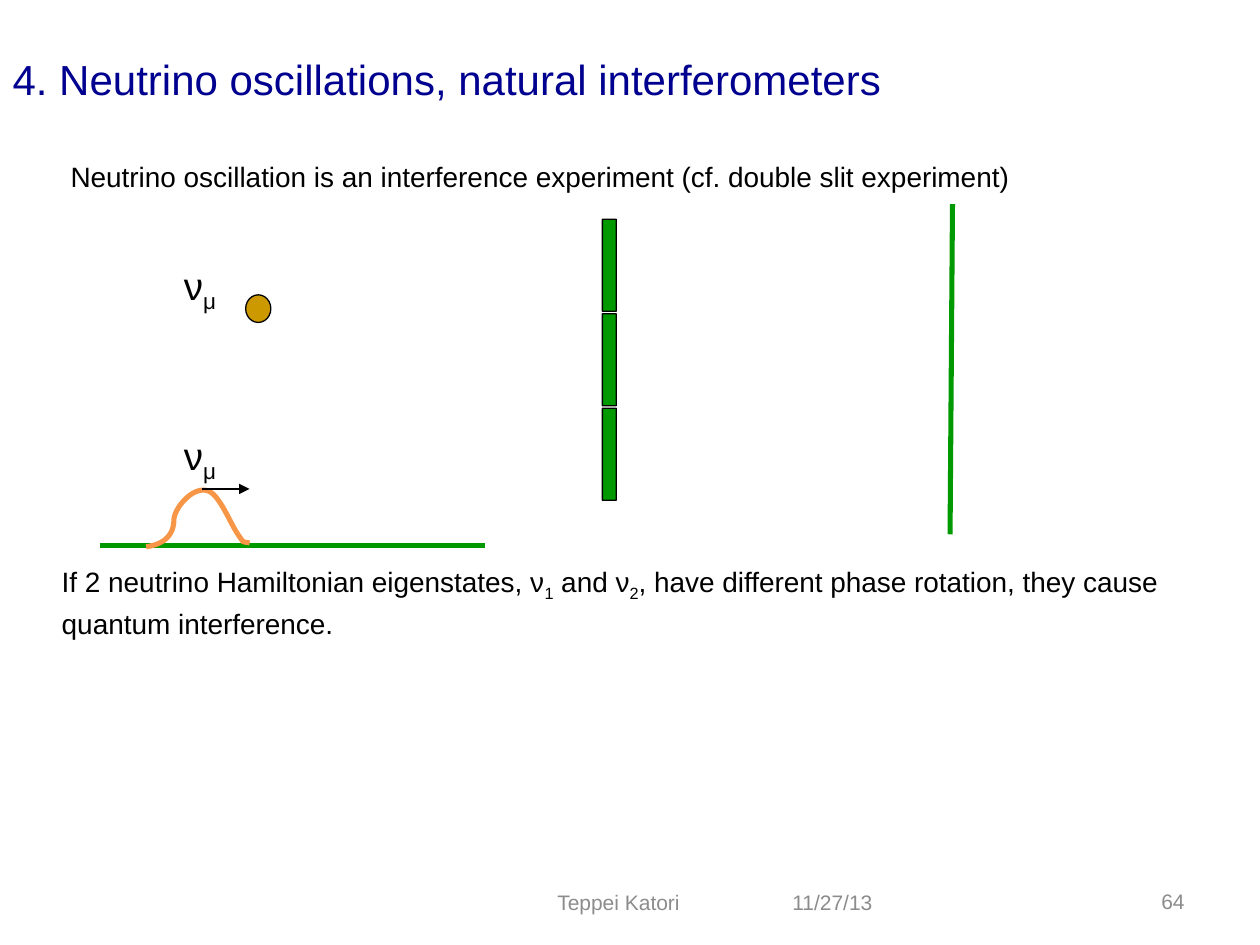
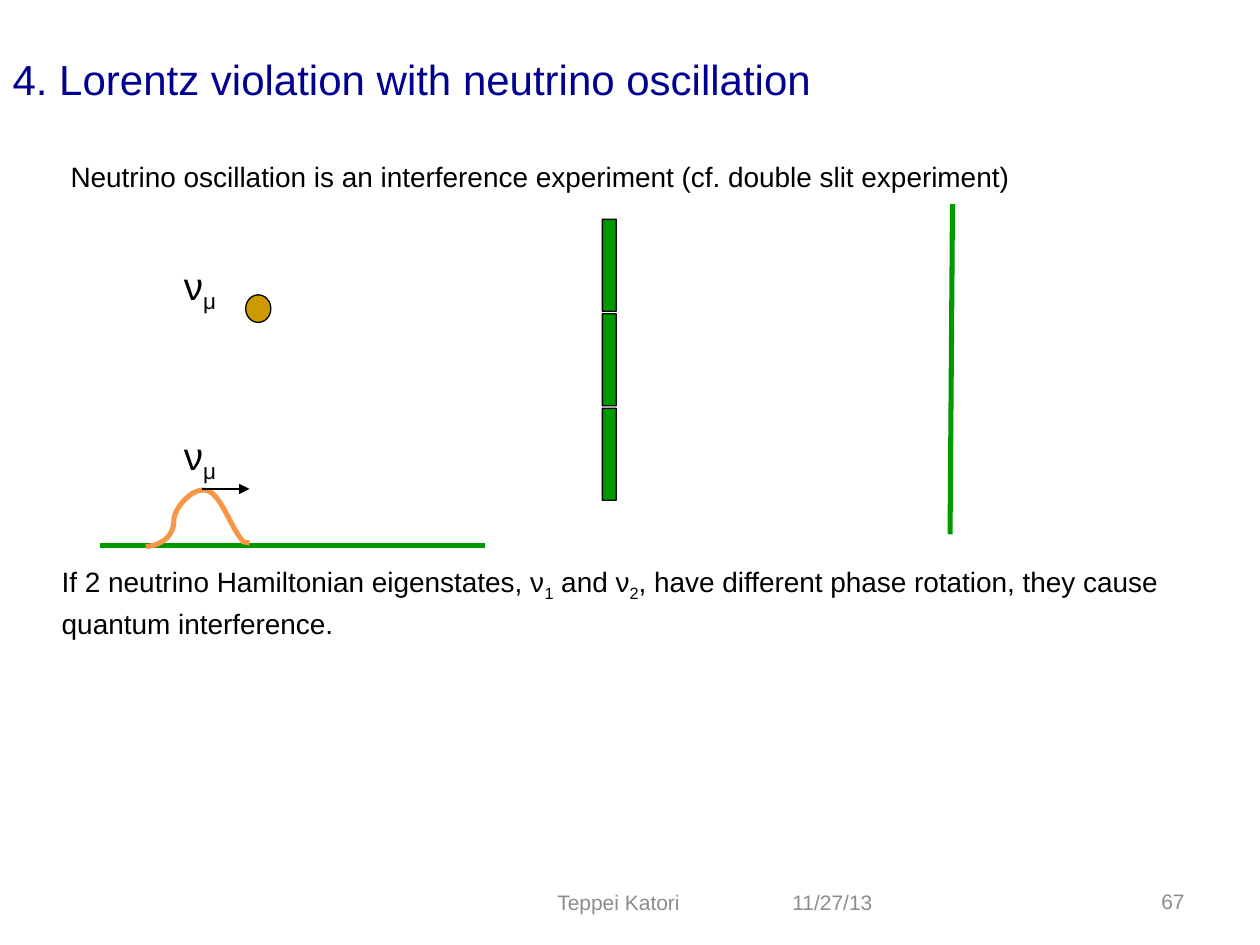
from dataclasses import dataclass

from lxml.etree import SubElement
from pptx import Presentation
from pptx.dml.color import RGBColor
from pptx.enum.shapes import MSO_CONNECTOR, MSO_SHAPE
from pptx.enum.text import MSO_ANCHOR, MSO_AUTO_SIZE, PP_ALIGN
from pptx.oxml.ns import qn
from pptx.util import Pt


@dataclass(frozen=True)
class Theme:
    font: str = "Arial"
    title: RGBColor = RGBColor(0x00, 0x00, 0x90)
    ink: RGBColor = RGBColor(0x00, 0x00, 0x00)
    footer: RGBColor = RGBColor(0x8C, 0x8C, 0x8C)
    apparatus: RGBColor = RGBColor(0x00, 0x99, 0x00)
    source: RGBColor = RGBColor(0xCC, 0x99, 0x00)
    wave: RGBColor = RGBColor(0xF7, 0x96, 0x46)
    title_size: float = 24
    label_size: float = 22
    body_size: float = 16
    footer_size: float = 12
    thick: float = 2.89
    thin: float = 0.75
    line_spacing: float = 1.11


THEME = Theme()

SLIDES = [
    ("4. Neutrino oscillations, natural interferometers", "64"),
    ("4. Lorentz violation with neutrino oscillation", "67"),
]

# Text is a list of pieces; every second piece is a subscript.
INTRO = ["Neutrino oscillation is an interference experiment (cf. double slit experiment)"]
CONCLUSION = [
    "If 2 neutrino Hamiltonian eigenstates, ν", "1", " and ν", "2",
    ", have different phase rotation, they cause quantum interference.",
]
MUON_NEUTRINO = ["ν", "μ"]
INTRO_BOX = (40.3, 89.3, 625.7, 21.6)
CONCLUSION_BOX = (35.3, 320.4, 645.1, 42.5)
SOURCE_LABEL_BOX = (105.1, 146.2, 27.4, 28.8)
PACKET_LABEL_BOX = (105.1, 243.4, 27.4, 28.8)

DATE, AUTHOR = "11/27/13", "Teppei Katori"
DATE_BOX = (445.7, 501.1, 109.4, 28.8)
AUTHOR_BOX = (275, 501.1, 157, 28.8)
NUMBER_BOX = (563, 500.4, 121, 28.8)

SOURCE_BOX = (140.4, 168.5, 14.4, 15.8)
SCREEN = ((544.3, 116.6), (542.9, 305.3))
BASELINE = ((56.9, 311.8), (277.2, 311.8))
MOTION = ((115.2, 279.4), (142.6, 279.4))
SLIT_COUNT, SLIT_PITCH = 3, 54
FIRST_SLIT_BOX = (344.2, 125.3, 7.9, 52.6)

PACKET_START, PACKET_END = (83.5, 312.5), (142.6, 310.3)
PACKET_CURVES = [  # two control points and an end point each
    ((87.1, 311.8), (99.4, 310.3), (99.4, 296.6)),
    ((100.1, 288.7), (114.5, 272.9), (123.1, 283.7)),
    ((129.6, 291.6), (132.5, 301.7), (139, 309.6)),
]
CURVE_STEPS = 16


def points(values):
    return [Pt(value) for value in values]


def bezier(start, control_1, control_2, end):
    """Return evenly stepped points of a cubic curve, without its start."""
    curve = []
    for step in range(1, CURVE_STEPS + 1):
        t = step / CURVE_STEPS
        weights = ((1 - t) ** 3, 3 * t * (1 - t) ** 2, 3 * t * t * (1 - t), t ** 3)
        curve.append(tuple(sum(w * v for w, v in zip(weights, axis))
                           for axis in zip(start, control_1, control_2, end)))
    return curve


def style(paragraph, size, colour):
    paragraph.font.name = THEME.font
    paragraph.font.size = Pt(size)
    paragraph.font.color.rgb = colour


def add_text(shapes, box, pieces, size):
    frame = shapes.add_textbox(*points(box)).text_frame
    frame.word_wrap = True
    frame.auto_size = MSO_AUTO_SIZE.SHAPE_TO_FIT_TEXT
    frame.margin_left = frame.margin_top = frame.margin_right = frame.margin_bottom = 0
    paragraph = frame.paragraphs[0]
    paragraph.line_spacing = THEME.line_spacing
    style(paragraph, size, THEME.ink)
    for index, piece in enumerate(pieces):
        run = paragraph.add_run()
        run.text = piece
        if index % 2:
            run._r.get_or_add_rPr().set("baseline", "-25000")


def add_footer(shapes, box, text, alignment):
    frame = shapes.add_textbox(*points(box)).text_frame
    frame.word_wrap = True
    frame.vertical_anchor = MSO_ANCHOR.MIDDLE
    paragraph = frame.paragraphs[0]
    paragraph.text = text
    paragraph.alignment = alignment
    style(paragraph, THEME.footer_size, THEME.footer)


def add_line(shapes, ends, colour, width, arrow=False):
    start, end = ends
    line = shapes.add_connector(MSO_CONNECTOR.STRAIGHT, *points(start + end))
    line.line.color.rgb = colour
    line.line.width = Pt(width)
    if arrow:
        SubElement(line.line._get_or_add_ln(), qn("a:tailEnd"), type="triangle")
    SubElement(line._element.spPr, qn("a:effectLst"))


def add_solid(shapes, preset, box, colour):
    solid = shapes.add_shape(preset, *points(box))
    solid.shadow.inherit = False
    solid.fill.solid()
    solid.fill.fore_color.rgb = colour
    solid.line.color.rgb = THEME.ink
    solid.line.width = Pt(THEME.thin)
    return solid


def add_wave_packet(shapes):
    outline = [PACKET_START]
    for curve in PACKET_CURVES:
        outline += bezier(outline[-1], *curve)
    outline.append(PACKET_END)

    packet = shapes.add_group_shape().shapes
    add_text(packet, PACKET_LABEL_BOX, MUON_NEUTRINO, THEME.label_size)
    builder = packet.build_freeform(*points(outline[0]))
    builder.add_line_segments([points(vertex) for vertex in outline[1:]], close=False)
    wave = builder.convert_to_shape()
    wave.shadow.inherit = False
    wave.fill.background()
    wave.line.color.rgb = THEME.wave
    wave.line.width = Pt(THEME.thick)
    add_line(packet, MOTION, THEME.ink, THEME.thin, arrow=True)


def add_slits(shapes):
    barrier = shapes.add_group_shape().shapes
    left, top, width, height = FIRST_SLIT_BOX
    for index in range(SLIT_COUNT):
        box = (left, top + index * SLIT_PITCH, width, height)
        wall = add_solid(barrier, MSO_SHAPE.ROUNDED_RECTANGLE, box, THEME.apparatus)
        wall.adjustments[0] = 0.015


def add_title(slide, text):
    title = slide.shapes.title
    title.left, title.top, title.width, title.height = points((0, 0, 720, 90))
    title.text_frame.vertical_anchor = MSO_ANCHOR.MIDDLE
    paragraph = title.text_frame.paragraphs[0]
    paragraph.text = text
    paragraph.alignment = PP_ALIGN.LEFT
    style(paragraph, THEME.title_size, THEME.title)


def add_interferometer_slide(deck, title, number):
    slide = deck.slides.add_slide(deck.slide_layouts.get_by_name("Title Only"))
    shapes = slide.shapes
    add_title(slide, title)
    add_solid(shapes, MSO_SHAPE.OVAL, SOURCE_BOX, THEME.source)
    add_line(shapes, SCREEN, THEME.apparatus, THEME.thick)
    add_text(shapes, SOURCE_LABEL_BOX, MUON_NEUTRINO, THEME.label_size)
    add_line(shapes, BASELINE, THEME.apparatus, THEME.thick)
    add_wave_packet(shapes)
    add_slits(shapes)
    add_text(shapes, INTRO_BOX, INTRO, THEME.body_size)
    add_text(shapes, CONCLUSION_BOX, CONCLUSION, THEME.body_size)
    add_footer(shapes, DATE_BOX, DATE, PP_ALIGN.LEFT)
    add_footer(shapes, AUTHOR_BOX, AUTHOR, PP_ALIGN.CENTER)
    add_footer(shapes, NUMBER_BOX, number, PP_ALIGN.RIGHT)


def main():
    deck = Presentation()
    deck.slide_width, deck.slide_height = Pt(720), Pt(540)
    for title, number in SLIDES:
        add_interferometer_slide(deck, title, number)
    deck.save("out.pptx")


if __name__ == "__main__":
    main()
